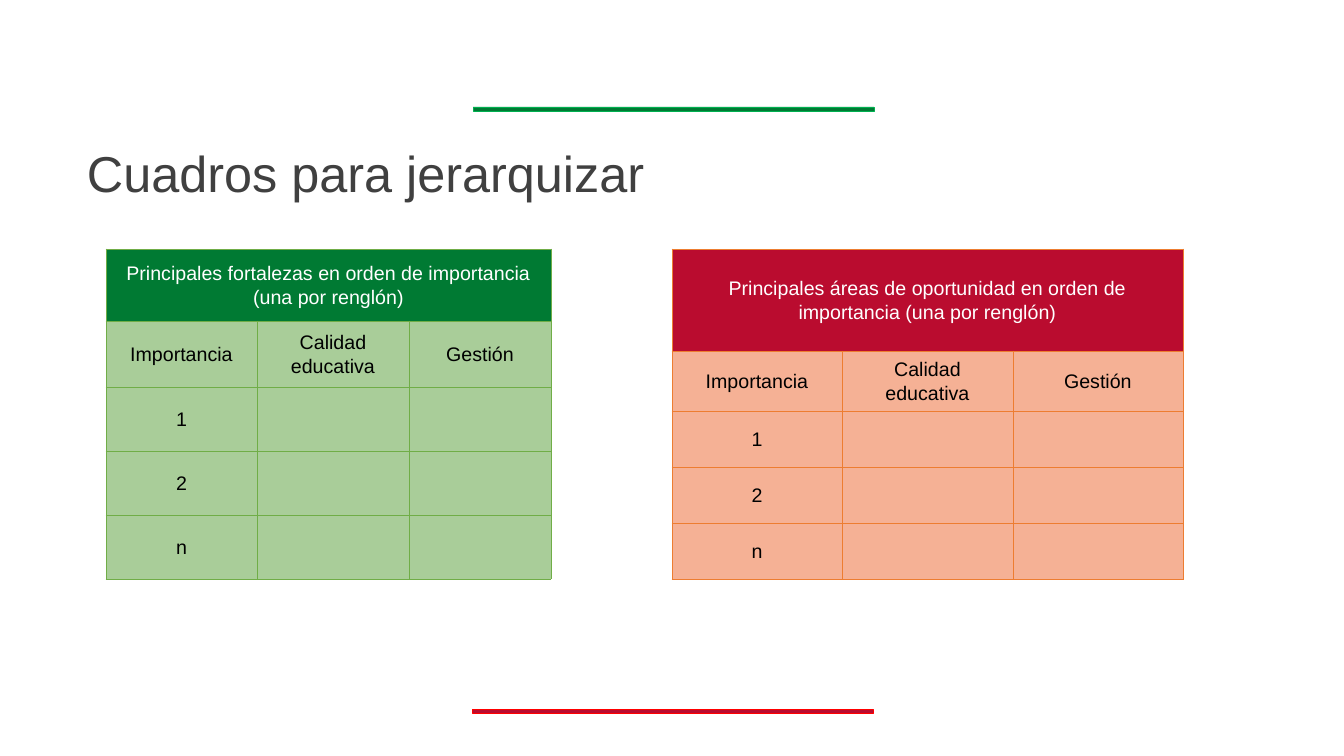
from lxml import etree
from pptx import Presentation
from pptx.dml.color import RGBColor
from pptx.enum.shapes import MSO_SHAPE
from pptx.enum.text import MSO_ANCHOR, PP_ALIGN
from pptx.oxml.ns import qn
from pptx.util import Emu, Pt

RECTANGLE = MSO_SHAPE.RECTANGLE
MIDDLE = MSO_ANCHOR.MIDDLE
CENTER, LEFT = PP_ALIGN.CENTER, PP_ALIGN.LEFT
EMU_PER_PX = 914400 / 100.8
FONT = "Arial"
COLORS = {
    "title": "404040", "white": "FFFFFF", "black": "000000",
    "green": "007A33", "green_edge": "00B050", "green_grid": "70AD47", "green_light": "A9CD99",
    "red": "BA0C2F", "red_edge": "FF0000", "orange_grid": "ED7D31", "orange_light": "F5B195",
}
BODY_ROWS = [["Importancia", "Calidad educativa", "Gestión"],
             ["1", "", ""], ["2", "", ""], ["n", "", ""]]


def px(length):
    """Turn pixels into EMU."""
    return Emu(round(length * EMU_PER_PX))


def color(name):
    """Look up a named colour."""
    return RGBColor.from_string(COLORS[name])


def write(frame, text, size, color_name, align, spacing):
    """Put one run of text in the first paragraph of a frame."""
    para = frame.paragraphs[0]
    para.alignment = align
    para.line_spacing = spacing
    span = para.add_run()
    span.text = text
    span.font.name = FONT
    span.font.size = Pt(size)
    span.font.color.rgb = color(color_name)


def add_bar(page, left, top, fill, edge):
    """Draw a thin decorative bar."""
    bar = page.shapes.add_shape(RECTANGLE, px(left), px(top), px(401), px(4))
    bar.shadow.inherit = False
    bar.fill.solid()
    bar.fill.fore_color.rgb = color(fill)
    bar.line.color.rgb = color(edge)
    bar.line.width = Pt(0.5)


def add_title(page, text):
    """Add the slide heading."""
    box = page.shapes.add_textbox(px(77), px(103), px(1154), px(146))
    frame = box.text_frame
    frame.word_wrap = True
    frame.vertical_anchor = MIDDLE
    write(frame, text, 36, "title", LEFT, 0.9)


def set_borders(cell, color_name):
    """Give a cell thin borders on its four sides."""
    properties = cell._tc.get_or_add_tcPr()
    for side in ("a:lnL", "a:lnR", "a:lnT", "a:lnB"):
        line = etree.SubElement(properties, qn(side), w=str(Pt(0.5)))
        fill = etree.SubElement(line, qn("a:solidFill"))
        etree.SubElement(fill, qn("a:srgbClr"), val=COLORS[color_name])


def style_cell(cell, fill, grid, inset_x, inset_y):
    """Set the borders, fill, anchor and insets of a cell."""
    set_borders(cell, grid)
    cell.fill.solid()
    cell.fill.fore_color.rgb = color(fill)
    cell.vertical_anchor = MIDDLE
    cell.margin_left = cell.margin_right = px(inset_x)
    cell.margin_top = cell.margin_bottom = px(inset_y)


def add_ranking(page, left, widths, heights, heading, header_fill, body_fill, grid):
    """Add a ranking table with a merged heading row."""
    holder = page.shapes.add_table(len(heights), len(widths), px(left), px(249),
                                   px(sum(widths)), px(sum(heights)))
    table = holder.table
    table.first_row = table.horz_banding = False
    for column, width in zip(table.columns, widths):
        column.width = px(width)
    for row, height in zip(table.rows, heights):
        row.height = px(height)
    table.cell(0, 0).merge(table.cell(0, len(widths) - 1))
    for row_index, texts in enumerate([[heading, "", ""]] + BODY_ROWS):
        is_header = row_index == 0
        for column_index, text in enumerate(texts):
            cell = table.cell(row_index, column_index)
            if is_header:
                style_cell(cell, header_fill, grid, 13, 6)
            else:
                style_cell(cell, body_fill, grid, 12, 5)
            if text:
                write(cell.text_frame, text, 14, "white" if is_header else "black", CENTER, 1.07)


def main():
    """Build and save the slide."""
    deck = Presentation()
    deck.slide_width, deck.slide_height = px(1344), px(756)
    page = deck.slides.add_slide(deck.slide_layouts[6])
    add_bar(page, 472, 709, "red", "red_edge")
    add_bar(page, 473, 107, "green", "green_edge")
    add_title(page, "Cuadros para jerarquizar")
    add_ranking(page, 106, [151, 152, 142], [72, 66, 64, 64, 64],
                "Principales fortalezas en orden de importancia (una por renglón)",
                "green", "green_light", "green_grid")
    add_ranking(page, 672, [170, 171, 170], [102, 60, 56, 56, 56],
                "Principales áreas de oportunidad en orden de importancia (una por renglón)",
                "red", "orange_light", "orange_grid")
    deck.save("out.pptx")


if __name__ == "__main__":
    main()
